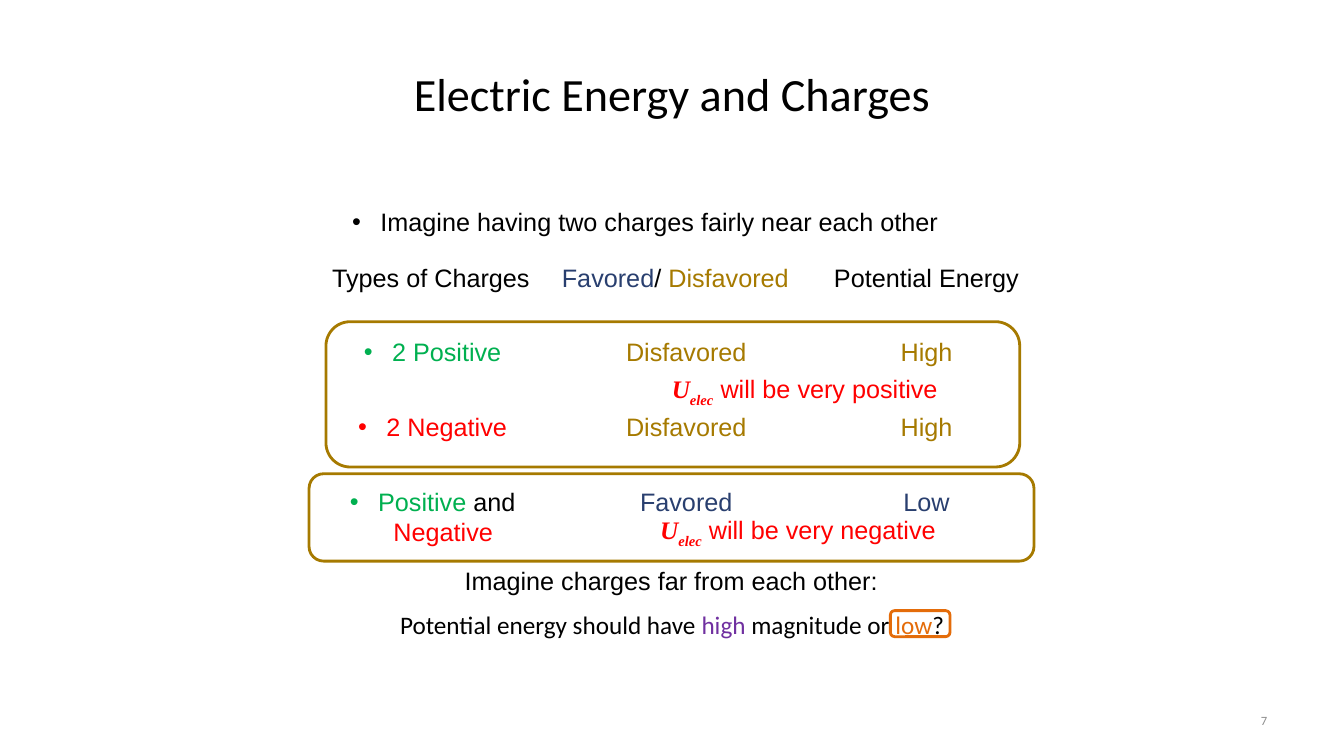
from pptx import Presentation, util as u
from pptx.dml.color import RGBColor
from pptx.enum import shapes, text
from lxml import etree

COLORS = {
    "black": "000000", "navy": "293F6F", "gold": "A67A00", "green": "00B050",
    "red": "FF0000", "purple": "7030A0", "orange": "E46C0A", "gray": "8C8C8C",
}
ALIGN = text.PP_ALIGN
LINE_ROWS = 0.48  # height of a one-line text box, in grid rows


def run(words, color="black", **style):
    """One piece of formatted text; style may hold font, strong, sub."""
    return {"words": words, "color": color, **style}


class Page:
    """A slide on a grid of 16 columns and 9 rows."""
    COLS, ROWS = 16, 9

    def __init__(self, deck):
        self.cell_w = deck.slide_width / self.COLS
        self.cell_h = deck.slide_height / self.ROWS
        self.slide = deck.slides.add_slide(deck.slide_layouts[5])

    def area(self, col, row, cols, rows):
        return (u.Emu(round(col * self.cell_w)), u.Emu(round(row * self.cell_h)),
                u.Emu(round(cols * self.cell_w)), u.Emu(round(rows * self.cell_h)))

    def set_text(self, frame, runs, font="Arial", size=18, align=ALIGN.CENTER,
                 bullet=False):
        paragraph = frame.paragraphs[0]
        paragraph.alignment = align
        for part in runs:
            piece = paragraph.add_run()
            piece.text = part["words"]
            piece.font.name = part.get("font", font)
            piece.font.size = u.Pt(size)
            piece.font.color.rgb = RGBColor.from_string(COLORS[part["color"]])
            if part.get("strong"):
                piece.font.bold = piece.font.italic = True
            if part.get("sub"):
                piece.font._element.set("baseline", "-25000")
        if bullet:
            props = paragraph._p.get_or_add_pPr()
            props.set("marL", str(u.Inches(0.28)))
            props.set("indent", str(-u.Inches(0.28)))
            ns = props.nsmap["a"]
            etree.SubElement(props, f"{{{ns}}}buFont", typeface="Arial")
            etree.SubElement(props, f"{{{ns}}}buChar", char="•")

    def title(self, words, area):
        holder = self.slide.shapes.title
        holder.left, holder.top, holder.width, holder.height = self.area(*area)
        holder.text_frame.vertical_anchor = text.MSO_ANCHOR.MIDDLE
        self.set_text(holder.text_frame, [run(words)], font="Calibri", size=33)

    def label(self, runs, center, row, cols, rows=LINE_ROWS, middle=False, **style):
        box = self.slide.shapes.add_textbox(
            *self.area(center - cols / 2, row, cols, rows))
        frame = box.text_frame
        frame.word_wrap = True
        if middle:
            frame.vertical_anchor = text.MSO_ANCHOR.MIDDLE
        else:
            frame.auto_size = text.MSO_AUTO_SIZE.SHAPE_TO_FIT_TEXT
        self.set_text(frame, runs, **style)

    def outline(self, area, color):
        box = self.slide.shapes.add_shape(
            shapes.MSO_SHAPE.ROUNDED_RECTANGLE, *self.area(*area))
        box.shadow.inherit = False
        box.fill.background()
        box.line.color.rgb = RGBColor.from_string(COLORS[color])
        box.line.width = u.Pt(2)


def main():
    deck = Presentation()
    deck.slide_width, deck.slide_height = u.Inches(13.33), u.Inches(7.5)
    page = Page(deck)

    page.title("Electric Energy and Charges", (0.8, 0.36, 14.4, 1.5))
    page.label([run("Imagine having two charges fairly near each other")],
               7.68, 2.4, 7.61, bullet=True)

    # Column headings
    headings = [
        ([run("Types of Charges")], 5.13, 2.77),
        ([run("Favored", "navy"), run("/ "), run("Disfavored", "gold")], 8.04, 3.02),
        ([run("Potential Energy")], 11.03, 2.77),
    ]
    for heading, center, cols in headings:
        page.label(heading, center, 3.06, cols)

    # Charge pairs: kind, preference, energy level
    pairs = [
        ([run("2 Positive", "green")], "Disfavored", "High", "gold", 2.63, LINE_ROWS),
        ([run("2 Negative", "red")], "Disfavored", "High", "gold", 2.63, LINE_ROWS),
        ([run("Positive", "green"), run(" and"), run(" Negative ", "red")],
         "Favored", "Low", "navy", 3.11, 0.85),
    ]
    for index, (kind, preference, level, color, cols, rows) in enumerate(pairs):
        row = 3.95 + 0.89 * index
        page.label(kind, 5.15, row, cols, rows, bullet=True)
        page.label([run(preference, color)], 8.17, row, 2.63)
        page.label([run(level, color)], 11.03, row, 2.63)

    # Sign of the potential energy
    symbol = {"color": "red", "font": "Times New Roman", "strong": True}
    for sign, center, row, cols in [("positive", 9.58, 4.39, 3.46),
                                    ("negative", 9.5, 6.07, 3.6)]:
        page.label([run("U", **symbol), run("elec", sub=True, **symbol),
                    run(f" will be very {sign}", "red")], center, row, cols)

    # Closing question
    page.label([run("Imagine charges far from each other:")], 7.99, 6.67, 6.74)
    page.label([run("Potential energy should have "), run("high ", "purple"),
                run("magnitude or "), run("low", "orange"), run("?")],
               8, 7.2, 7.43, font="Calibri")

    # Frames around like charges, unlike charges and the answer
    page.outline((3.88, 3.83, 8.26, 1.73), "gold")
    page.outline((3.68, 5.64, 8.63, 1.04), "gold")
    page.outline((10.6, 7.27, 0.71, 0.31), "orange")

    # Page number
    page.label([run("7", "gray")], 13.34, 8.34, 3.73, middle=True,
               font="Calibri", size=9, align=ALIGN.RIGHT)

    deck.save("out.pptx")


if __name__ == "__main__":
    main()
